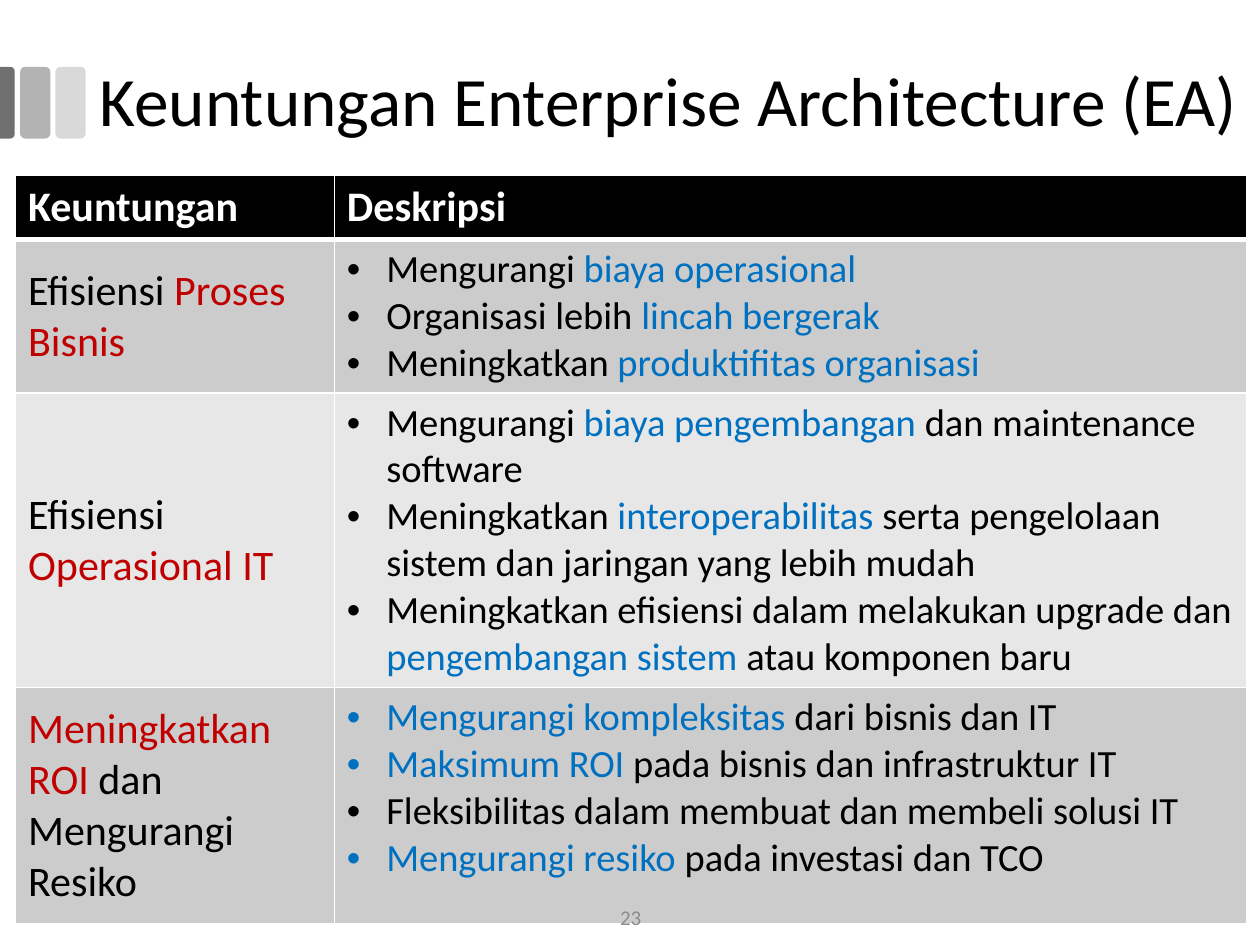
"""Build a slide with a table of the benefits of enterprise architecture."""
from lxml.etree import SubElement
from pptx import Presentation
from pptx.dml.color import RGBColor
from pptx.enum.shapes import MSO_SHAPE
from pptx.enum.text import MSO_ANCHOR, MSO_AUTO_SIZE, PP_ALIGN
from pptx.oxml import parse_xml
from pptx.oxml.ns import nsdecls, qn
from pptx.util import Pt

BLACK = RGBColor(0x00, 0x00, 0x00)
WHITE = RGBColor(0xFF, 0xFF, 0xFF)
RED = RGBColor(0xC0, 0x00, 0x00)
BLUE = RGBColor(0x00, 0x70, 0xC0)
NUMBER_GREY = RGBColor(0x8C, 0x8C, 0x8C)
DARK_BAR = RGBColor(0x70, 0x70, 0x70)
MIDDLE_BAR = RGBColor(0xB3, 0xB3, 0xB3)
LIGHT_BAR = RGBColor(0xD9, 0xD9, 0xD9)
DARK_BAND = RGBColor(0xCC, 0xCC, 0xCC)
LIGHT_BAND = RGBColor(0xE7, 0xE7, 0xE7)

TITLE = "Keuntungan Enterprise Architecture (EA)"
PAGE_NUMBER = "23"
HEADERS = ["Keuntungan", "Deskripsi"]
BENEFITS = [
    ([("Efisiensi ", BLACK), ("Proses Bisnis", RED)],
     [[("Mengurangi ", BLACK), ("biaya operasional", BLUE)],
      [("Organisasi lebih ", BLACK), ("lincah bergerak", BLUE)],
      [("Meningkatkan ", BLACK), ("produktifitas organisasi", BLUE)]]),
    ([("Efisiensi ", BLACK), ("Operasional IT", RED)],
     [[("Mengurangi ", BLACK), ("biaya pengembangan ", BLUE),
       ("dan maintenance software", BLACK)],
      [("Meningkatkan ", BLACK), ("interoperabilitas ", BLUE),
       ("serta pengelolaan sistem dan jaringan yang lebih mudah", BLACK)],
      [("Meningkatkan efisiensi dalam melakukan upgrade dan ", BLACK),
       ("pengembangan sistem ", BLUE), ("atau komponen baru", BLACK)]]),
    ([("Meningkatkan ROI ", RED), ("dan Mengurangi Resiko", BLACK)],
     [[("Mengurangi kompleksitas ", BLUE), ("dari bisnis dan IT", BLACK)],
      [("Maksimum ROI ", BLUE), ("pada bisnis dan infrastruktur IT", BLACK)],
      [("Fleksibilitas dalam membuat dan membeli solusi IT", BLACK)],
      [("Mengurangi resiko ", BLUE), ("pada investasi dan TCO", BLACK)]]),
]
BARS = [
    (MSO_SHAPE.ROUNDED_RECTANGLE, (31.7, 38.2, 17.3, 41), 0, LIGHT_BAR, [0.17]),
    (MSO_SHAPE.ROUNDED_RECTANGLE, (11.5, 38.2, 17.3, 41), 0, MIDDLE_BAR, [0.17]),
    (MSO_SHAPE.ROUND_2_SAME_RECTANGLE, (-16.4, 54.4, 41, 8.6), 90, DARK_BAR, [0.29, 0]),
]
COLUMN_WIDTHS = [182.2, 521.6]
ROW_HEIGHTS = [36.5, 87.8, 168.3, 135]
TABLE_LEFT, TABLE_TOP = 8.9, 100.4
BULLET_INDENT = Pt(22.5)


def points(values):
    return [Pt(value) for value in values]


def add_spans(para, spans, size, bold=False):
    for text, color in spans:
        span = para.add_run()
        span.text = text
        form = {"name": "Calibri", "size": Pt(size), "bold": bold}
        for key, value in form.items():
            setattr(span.font, key, value)
        span.font.color.rgb = color


def add_bullet(para):
    properties = para._p.get_or_add_pPr()
    properties.set("marL", str(BULLET_INDENT))
    properties.set("indent", str(-BULLET_INDENT))
    SubElement(properties, qn("a:buFont")).set("typeface", "Arial")
    SubElement(properties, qn("a:buChar")).set("char", "•")


def set_borders(cell, row):
    widths = {"L": 1, "R": 1, "T": 3 if row == 1 else 1, "B": 3 if row == 0 else 1}
    for place, (side, width) in enumerate(widths.items()):
        border = parse_xml(
            f'<a:ln{side} {nsdecls("a")} w="{Pt(width)}"><a:solidFill>'
            f'<a:srgbClr val="{WHITE}"/></a:solidFill></a:ln{side}>')
        cell._tc.get_or_add_tcPr().insert(place, border)


def fill_cell(cell, row, color, paragraphs, size, bold=False, bullets=False):
    cell.fill.solid()
    cell.fill.fore_color.rgb = color
    set_borders(cell, row)
    for index, spans in enumerate(paragraphs):
        frame = cell.text_frame
        para = frame.add_paragraph() if index else frame.paragraphs[0]
        if bullets:
            add_bullet(para)
        add_spans(para, spans, size, bold)


def add_bars(page):
    for kind, area, rotation, color, adjustments in BARS:
        bar = page.shapes.add_shape(kind, *points(area))
        bar.rotation = rotation
        bar.shadow.inherit = False
        bar.fill.solid()
        bar.fill.fore_color.rgb = color
        bar.line.fill.background()
        for index, value in enumerate(adjustments):
            bar.adjustments[index] = value


def add_title(page):
    title = page.shapes.title
    title.left, title.top, title.width, title.height = points((49.7, 12.2, 670.3, 94.3))
    form = {"word_wrap": True, "auto_size": MSO_AUTO_SIZE.NONE,
            "vertical_anchor": MSO_ANCHOR.MIDDLE}
    for key, value in form.items():
        setattr(title.text_frame, key, value)
    para = title.text_frame.paragraphs[0]
    para.alignment = PP_ALIGN.LEFT
    para.line_spacing = 0.9
    add_spans(para, [(TITLE, BLACK)], 39.6)


def add_benefits(page):
    area = (TABLE_LEFT, TABLE_TOP, sum(COLUMN_WIDTHS), sum(ROW_HEIGHTS))
    table = page.shapes.add_table(len(ROW_HEIGHTS), len(COLUMN_WIDTHS), *points(area)).table
    table.horz_banding = False
    for column, width in zip(table.columns, COLUMN_WIDTHS):
        column.width = Pt(width)
    for row, height in zip(table.rows, ROW_HEIGHTS):
        row.height = Pt(height)
    for index, header in enumerate(HEADERS):
        fill_cell(table.cell(0, index), 0, BLACK, [[(header, WHITE)]], 24, bold=True)
    for row, (benefit, details) in enumerate(BENEFITS, 1):
        color = DARK_BAND if row % 2 else LIGHT_BAND
        name = table.cell(row, 0)
        name.vertical_anchor = MSO_ANCHOR.MIDDLE
        fill_cell(name, row, color, [benefit], 24)
        fill_cell(table.cell(row, 1), row, color, details, 22, bullets=True)


def add_page_number(page):
    box = page.shapes.add_textbox(*points((279.4, 509.8, 162, 28.8)))
    box.text_frame.word_wrap = True
    box.text_frame.vertical_anchor = MSO_ANCHOR.MIDDLE
    para = box.text_frame.paragraphs[0]
    para.alignment = PP_ALIGN.CENTER
    add_spans(para, [(PAGE_NUMBER, NUMBER_GREY)], 12)


def main():
    deck = Presentation()
    deck.slide_width, deck.slide_height = points((720, 540))
    page = deck.slides.add_slide(deck.slide_layouts[5])
    add_bars(page)
    add_title(page)
    add_benefits(page)
    add_page_number(page)
    deck.save("out.pptx")


if __name__ == "__main__":
    main()
